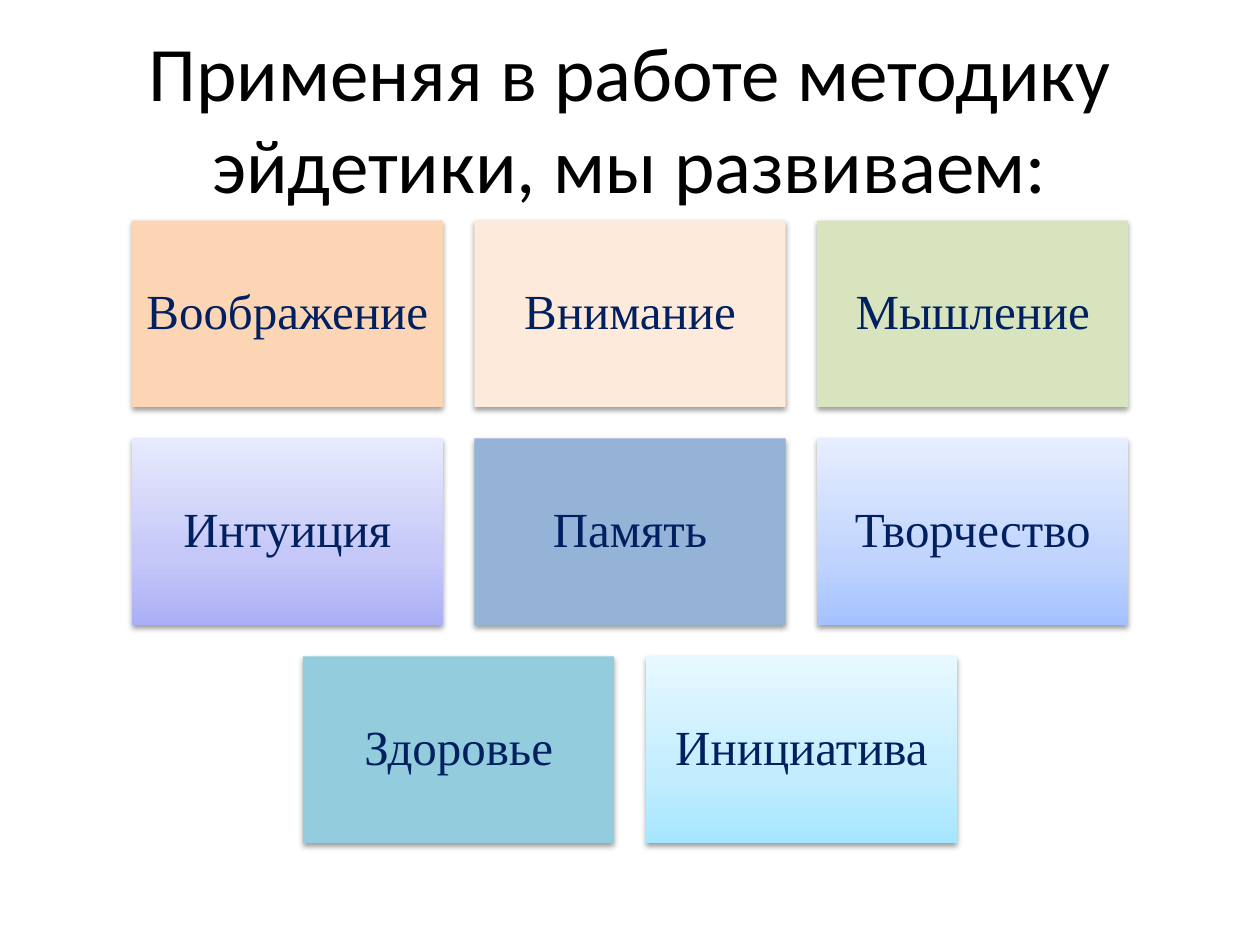
from dataclasses import dataclass

from lxml import etree
from pptx import Presentation
from pptx import util as u
from pptx.dml import color
from pptx.enum import shapes, text
from pptx.oxml import ns


@dataclass(frozen=True)
class Theme:
    title_font: str = "Calibri"
    title_size: int = 44
    title_color: str = "000000"
    skill_font: str = "Times New Roman"
    skill_size: int = 28
    skill_color: str = "002060"
    shadow_color: str = "000000"
    peach: tuple = ("FCD5B5",)
    cream: tuple = ("FDEADA",)
    green: tuple = ("D7E4BD",)
    steel: tuple = ("95B3D7",)
    teal: tuple = ("93CDDD",)
    violet: tuple = ("ABAFF6", "C4C7F7", "E7E9FD")
    blue: tuple = ("A4C2FF", "C0D4FE", "E6EEFF")
    sky: tuple = ("A7E6FF", "C1EDFF", "E7F8FF")


@dataclass(frozen=True)
class Grid:
    slide_width: float = 10
    slide_height: float = 7.5
    top: float = 1.75
    tile_width: float = 2.47
    tile_height: float = 1.48
    gap: float = 0.25

    def place(self, column: int, row: int, columns: int) -> tuple:
        row_width = columns * self.tile_width + (columns - 1) * self.gap
        left = (self.slide_width - row_width) / 2 + column * (self.tile_width + self.gap)
        top = self.top + row * (self.tile_height + self.gap)
        return tuple(u.Inches(n) for n in (left, top, self.tile_width, self.tile_height))


@dataclass(frozen=True)
class Skill:
    name: str
    colors: tuple


THEME = Theme()
GRID = Grid()
STOPS = (0, 35000, 100000)
FRAME = {
    "word_wrap": True,
    "vertical_anchor": text.MSO_ANCHOR.MIDDLE,
    "margin_left": u.Inches(0.11),
    "margin_right": u.Inches(0.11),
    "margin_top": u.Inches(0.12),
    "margin_bottom": u.Inches(0.12),
}
SKILL_ROWS = (
    (Skill("Воображение", THEME.peach), Skill("Внимание", THEME.cream), Skill("Мышление", THEME.green)),
    (Skill("Интуиция", THEME.violet), Skill("Память", THEME.steel), Skill("Творчество", THEME.blue)),
    (Skill("Здоровье", THEME.teal), Skill("Инициатива", THEME.sky)),
)


def apply(target, values: dict) -> None:
    for name, value in values.items():
        setattr(target, name, value)


def add_color(parent, rgb: str):
    return etree.SubElement(parent, ns.qn("a:srgbClr"), val=rgb)


def write(frame, words: str, font: str, size: int, rgb: str) -> None:
    frame.text = words
    paragraph = frame.paragraphs[0]
    paragraph.alignment = text.PP_ALIGN.CENTER
    run = paragraph.runs[0]
    apply(run.font, {"name": font, "size": u.Pt(size)})
    run.font.color.rgb = color.RGBColor.from_string(rgb)


def paint(tile, colors: tuple) -> None:
    if len(colors) == 1:
        tile.fill.solid()
        tile.fill.fore_color.rgb = color.RGBColor.from_string(colors[0])
        return
    tile.fill.gradient()
    tile.fill.gradient_angle = 90
    stops = tile.element.spPr.find(ns.qn("a:gradFill")).find(ns.qn("a:gsLst"))
    for stop in list(stops):
        stops.remove(stop)
    for position, rgb in zip(STOPS, colors):
        add_color(etree.SubElement(stops, ns.qn("a:gs"), pos=str(position)), rgb)


def cast_shadow(tile) -> None:
    tile.shadow.inherit = False
    effects = tile.element.spPr.find(ns.qn("a:effectLst"))
    shadow = etree.SubElement(
        effects, ns.qn("a:outerShdw"),
        blurRad="40000", dist="20000", dir="5400000", rotWithShape="0",
    )
    etree.SubElement(add_color(shadow, THEME.shadow_color), ns.qn("a:alpha"), val="38000")


def add_skill(slide, skill: Skill, box: tuple) -> None:
    tile = slide.shapes.add_shape(shapes.MSO_SHAPE.RECTANGLE, *box)
    paint(tile, skill.colors)
    tile.line.fill.background()
    cast_shadow(tile)
    apply(tile.text_frame, FRAME)
    write(tile.text_frame, skill.name, THEME.skill_font, THEME.skill_size, THEME.skill_color)
    tile.text_frame.paragraphs[0].line_spacing = 0.9


def main() -> None:
    deck = Presentation()
    apply(deck, {"slide_width": u.Inches(GRID.slide_width), "slide_height": u.Inches(GRID.slide_height)})
    slide = deck.slides.add_slide(deck.slide_layouts[5])
    title = slide.shapes.title
    apply(title, {
        "left": int(deck.slide_width * 0.05),
        "top": int(deck.slide_height * 0.04),
        "width": int(deck.slide_width * 0.9),
        "height": u.Inches(1.25),
    })
    title.text_frame.vertical_anchor = text.MSO_ANCHOR.MIDDLE
    write(title.text_frame, "Применяя в работе методику эйдетики, мы развиваем:",
          THEME.title_font, THEME.title_size, THEME.title_color)
    for row, skills in enumerate(SKILL_ROWS):
        for column, skill in enumerate(skills):
            add_skill(slide, skill, GRID.place(column, row, len(skills)))
    deck.save("out.pptx")


if __name__ == "__main__":
    main()
